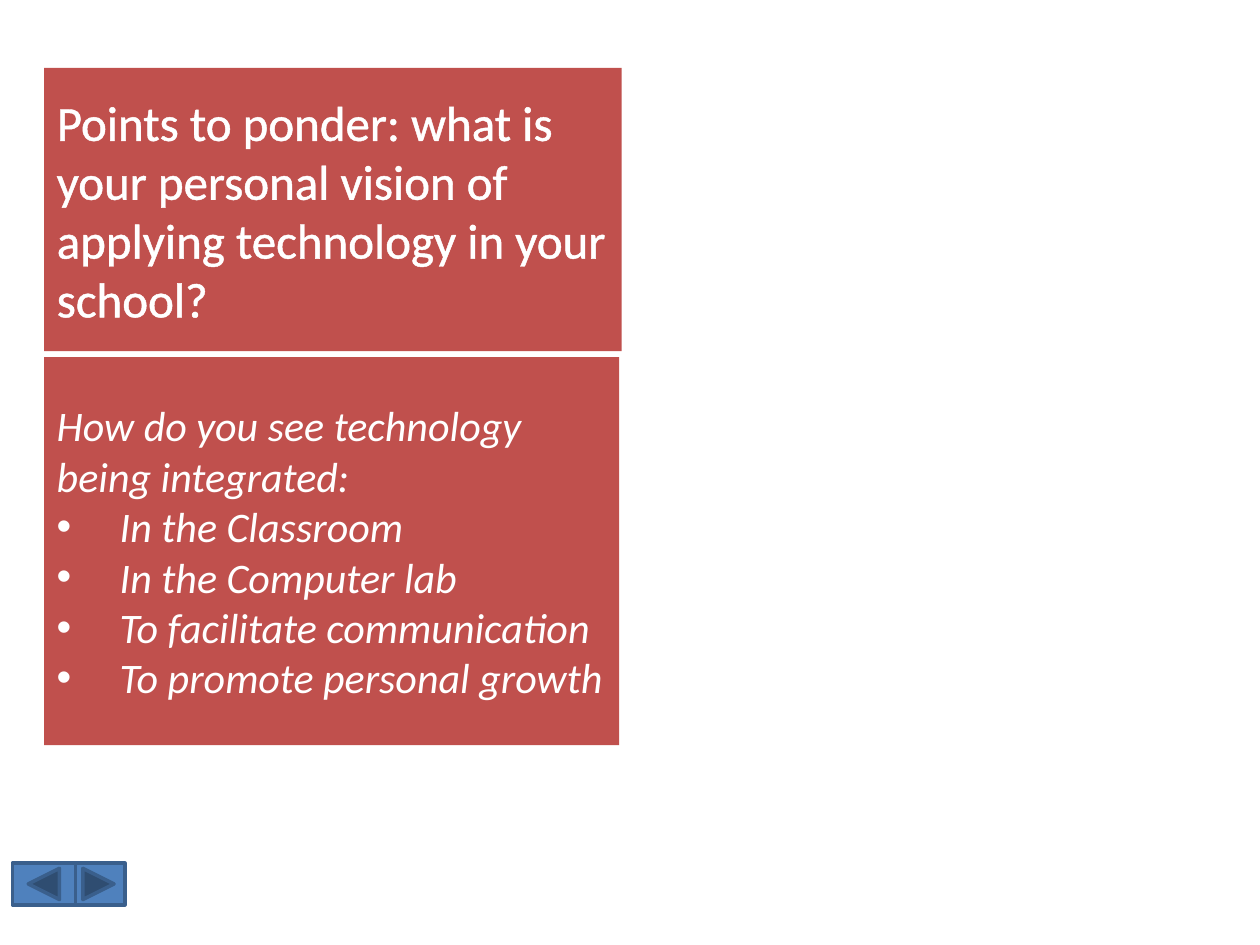
"""Build a slide with a question, a bulleted prompt list and two navigation buttons."""
from lxml.etree import SubElement
from pptx import Presentation
from pptx.dml.color import RGBColor
from pptx.enum.shapes import MSO_SHAPE as Preset
from pptx.enum.text import MSO_ANCHOR as Anchor, MSO_AUTO_SIZE as AutoSize, PP_ALIGN as Align
from pptx.oxml import parse_xml
from pptx.oxml.ns import nsdecls, qn
from pptx.util import Cm, Pt

RED = RGBColor(0xC0, 0x50, 0x4D)
BLUE = RGBColor(0x4F, 0x81, 0xBD)
DARK_BLUE = RGBColor(0x3A, 0x5F, 0x8C)
WHITE = RGBColor(0xFF, 0xFF, 0xFF)


class SlideBuilder:
    def __init__(self, slide, font_name="Calibri"):
        self.slide = slide
        self.font_name = font_name

    def place_panel(self, shape, left, top, width, height):
        shape.left, shape.top = Cm(left), Cm(top)
        shape.width, shape.height = Cm(width), Cm(height)
        shape.fill.solid()
        shape.fill.fore_color.rgb = RED
        frame = shape.text_frame
        frame.word_wrap = True
        frame.auto_size = AutoSize.NONE
        frame.vertical_anchor = Anchor.MIDDLE
        return frame

    def add_run(self, paragraph, text, size, italic=False):
        paragraph.alignment = Align.LEFT
        paragraph.space_before = Pt(0)
        run = paragraph.add_run()
        run.text = text
        font = run.font
        font.name, font.size, font.italic = self.font_name, Pt(size), italic
        font.color.rgb = WHITE
        return run

    def add_title(self, text, *box):
        frame = self.place_panel(self.slide.shapes.title, *box)
        run = self.add_run(frame.paragraphs[0], text, 28)
        outline = parse_xml(
            f'<a:ln {nsdecls("a")} w="{Pt(1.45)}"><a:solidFill>'
            f'<a:srgbClr val="{WHITE}"/></a:solidFill></a:ln>')
        run.font._element.insert(0, outline)

    def add_list(self, lead, items, *box):
        frame = self.place_panel(self.slide.placeholders[1], *box)
        for index, text in enumerate([lead, *items]):
            paragraph = frame.add_paragraph() if index else frame.paragraphs[0]
            properties = paragraph._p.get_or_add_pPr()
            indent = Cm(1.27) if index else 0
            properties.set("marL", str(indent))
            properties.set("indent", str(-indent))
            if index:
                SubElement(properties, qn("a:buFont"), typeface="Arial")
                SubElement(properties, qn("a:buChar"), char="•")
            else:
                SubElement(properties, qn("a:buNone"))
            self.add_run(paragraph, text, 24, italic=True)

    def add_button(self, preset, left, width):
        shape = self.slide.shapes.add_shape(preset, Cm(left), Cm(17.4), Cm(width), Cm(0.84))
        shape.shadow.inherit = False
        shape.fill.solid()
        shape.fill.fore_color.rgb = BLUE
        shape.line.color.rgb = DARK_BLUE
        shape.line.width = Pt(2)


def main():
    presentation = Presentation()
    presentation.slide_width, presentation.slide_height = Cm(25.4), Cm(19.05)
    slide = presentation.slides.add_slide(presentation.slide_layouts[1])
    builder = SlideBuilder(slide)
    builder.add_title(
        "Points to ponder: what is your personal vision of applying technology in your school?",
        0.89, 1.37, 11.64, 5.71)
    builder.add_list(
        "How do you see technology being integrated:",
        ["In the Classroom", "In the Computer lab",
         "To facilitate communication", "To promote personal growth"],
        0.89, 7.2, 11.59, 7.82)
    builder.add_button(Preset.ACTION_BUTTON_FORWARD_OR_NEXT, 1.45, 1.07)
    builder.add_button(Preset.ACTION_BUTTON_BACK_OR_PREVIOUS, 0.25, 1.27)
    presentation.save("out.pptx")


if __name__ == "__main__":
    main()
